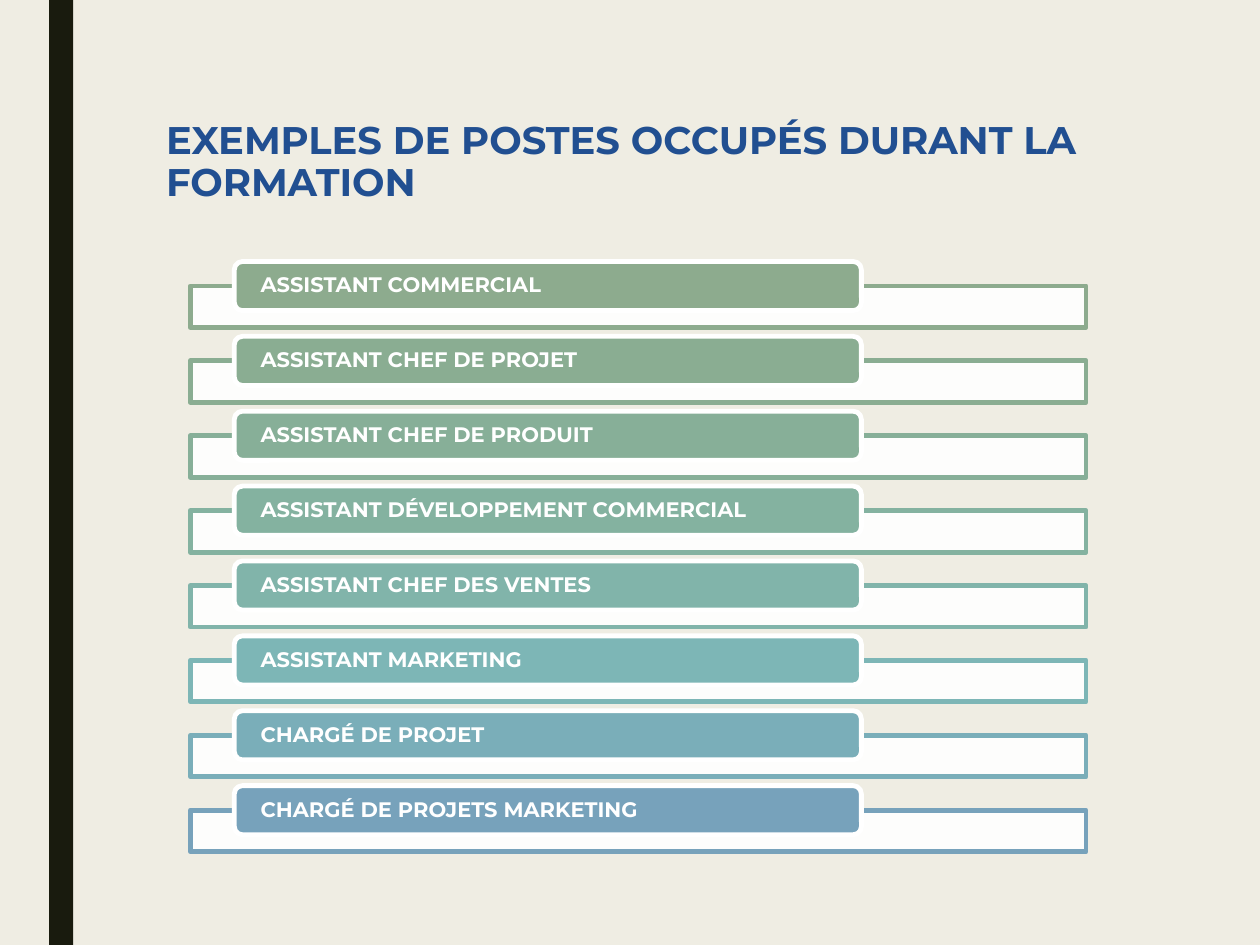
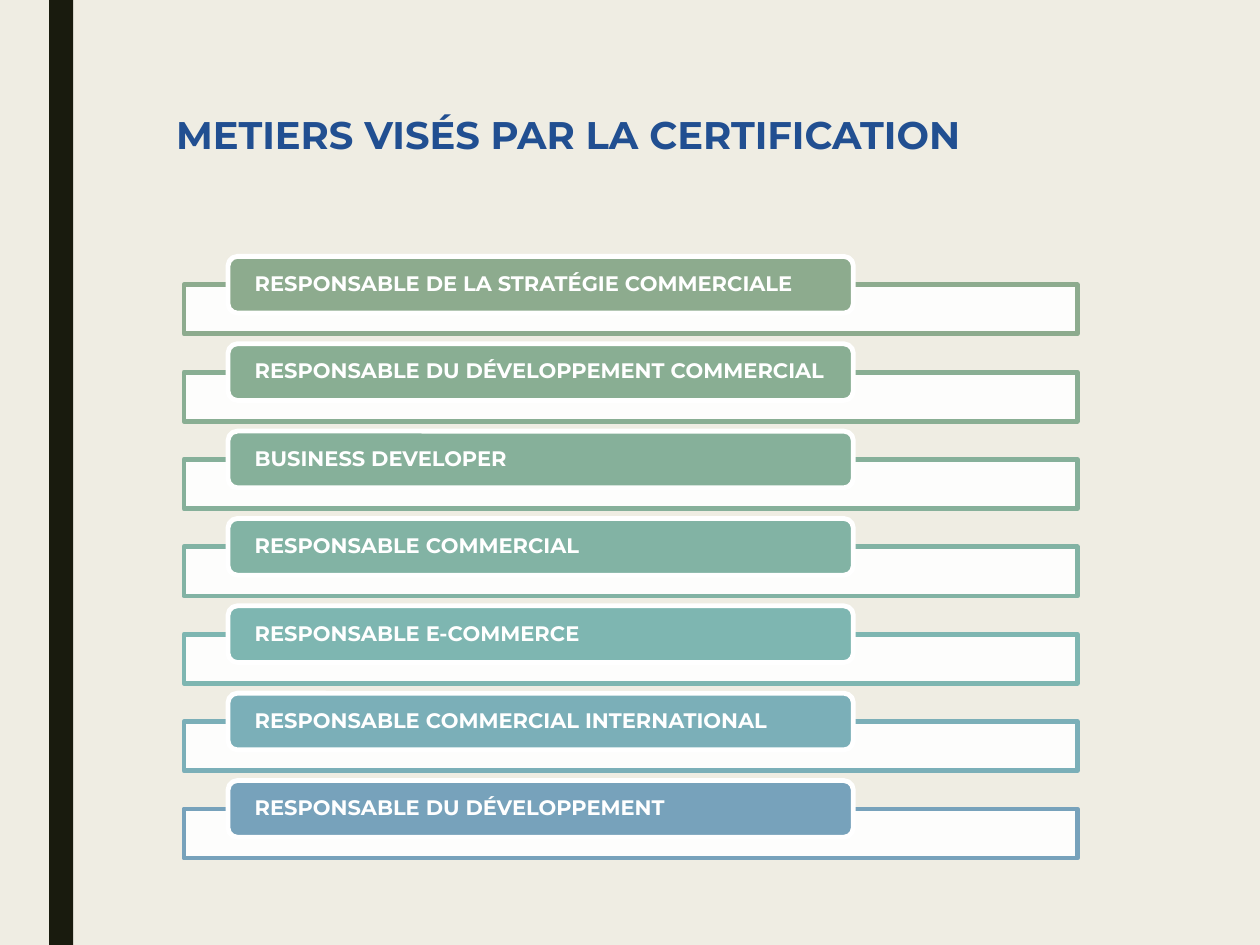
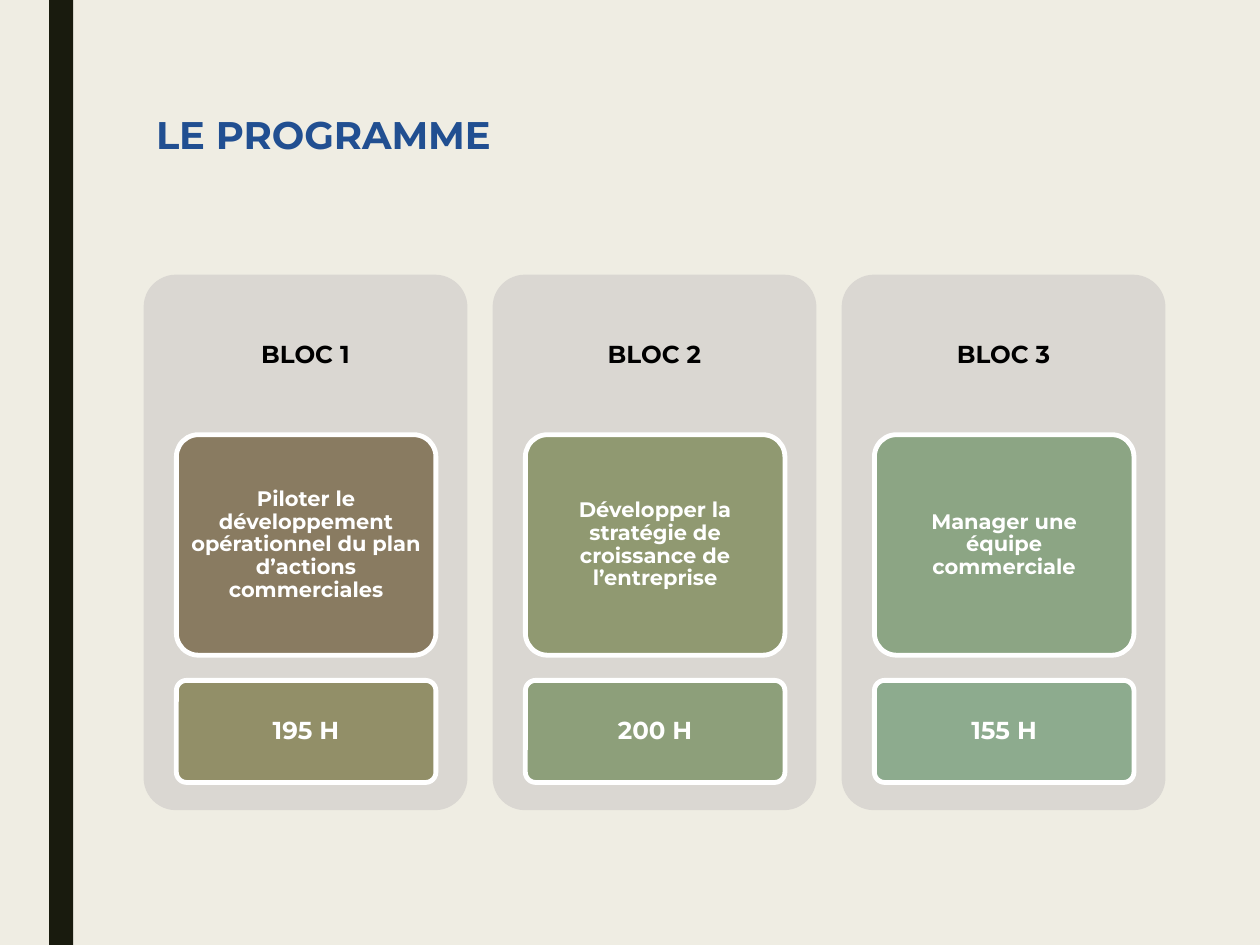
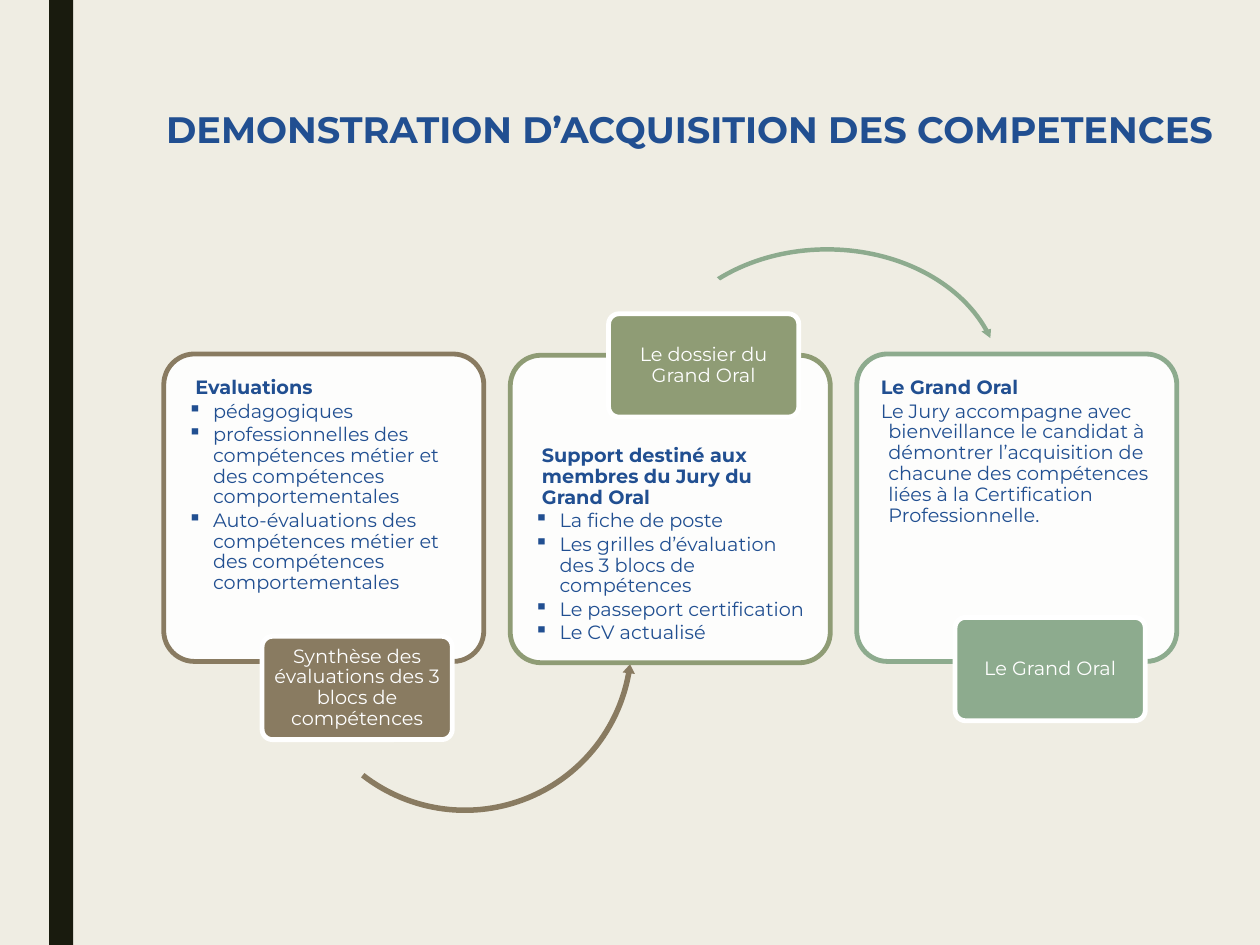
from lxml.etree import SubElement
from pptx import Presentation
from pptx.dml.color import RGBColor
from pptx.enum.shapes import MSO_SHAPE as SHAPE
from pptx.enum.text import MSO_ANCHOR as ANCHOR, PP_ALIGN as ALIGN
from pptx.oxml.ns import qn
from pptx.util import Inches, Pt

FONT = "Montserrat"
LINE_WIDTH = 2.75
COLORS = {
    "paper": "EFEDE3", "band": "191B0E", "blue": "214F91", "white": "FFFFFF",
    "black": "000000", "panel": "DAD7D2", "brown": "897B61", "khaki": "928F68",
    "moss": "909971", "olive": "8F9C75", "fern": "8D9F7A", "leaf": "8CA584",
    "sage": "8DAB8E", "sage2": "8AAD92", "sage3": "87AF98", "mint": "84B2A0",
    "mint2": "81B4AA", "teal": "7DB6B6", "lagoon": "7AAEB9", "steel": "77A2BB",
    "sage4": "89AE93", "sage5": "86B09A", "mint3": "82B3A4", "teal2": "7EB6B1",
    "lagoon2": "7BAFB8",
}
POSTS = [
    ("ASSISTANT COMMERCIAL", "sage"),
    ("ASSISTANT CHEF DE PROJET", "sage2"),
    ("ASSISTANT CHEF DE PRODUIT", "sage3"),
    ("ASSISTANT DÉVELOPPEMENT COMMERCIAL", "mint"),
    ("ASSISTANT CHEF DES VENTES", "mint2"),
    ("ASSISTANT MARKETING", "teal"),
    ("CHARGÉ DE PROJET", "lagoon"),
    ("CHARGÉ DE PROJETS MARKETING", "steel"),
]
JOBS = [
    ("RESPONSABLE DE LA STRATÉGIE COMMERCIALE", "sage"),
    ("RESPONSABLE DU DÉVELOPPEMENT COMMERCIAL", "sage4"),
    ("BUSINESS DEVELOPER", "sage5"),
    ("RESPONSABLE COMMERCIAL", "mint3"),
    ("RESPONSABLE E-COMMERCE", "teal2"),
    ("RESPONSABLE COMMERCIAL INTERNATIONAL", "lagoon2"),
    ("RESPONSABLE DU DÉVELOPPEMENT", "steel"),
]
BLOCKS = [
    ("BLOC 1", "Piloter le développement opérationnel du plan d’actions commerciales",
     "brown", "195 H", "khaki"),
    ("BLOC 2", "Développer la stratégie de croissance de l’entreprise",
     "moss", "200 H", "fern"),
    ("BLOC 3", "Manager une\véquipe\vcommerciale", "leaf", "155 H", "sage"),
]


def rgb(name):
    """Return the named colour."""
    return RGBColor.from_string(COLORS[name])


def set_frame(tf, inset=(0, 0, 0, 0), anchor=ANCHOR.MIDDLE):
    """Wrap a text frame and set its left, top, right and bottom insets."""
    tf.word_wrap = True
    tf.vertical_anchor = anchor
    tf.margin_left, tf.margin_top, tf.margin_right, tf.margin_bottom = map(Inches, inset)


def write(tf, text, size=12, color="white", bold=False, align=ALIGN.LEFT,
          spacing=0.9, after=0, margin=0, indent=0, bullet=None):
    """Add one formatted paragraph to a text frame."""
    p = tf.add_paragraph() if tf.text else tf.paragraphs[0]
    p.text = text
    p.alignment, p.line_spacing, p.space_after = align, spacing, Pt(after)
    pPr = p._p.get_or_add_pPr()
    pPr.set("marL", str(Inches(margin)))
    pPr.set("indent", str(Inches(indent)))
    if bullet:
        SubElement(pPr, qn("a:buChar"), char=bullet)
    for r in p.runs:
        r.font.name, r.font.size, r.font.bold = FONT, Pt(size), bold
        r.font.color.rgb = rgb(color)


def add_shape(slide, kind, box, fill, line=None, alpha=None, adjust=()):
    """Add a flat preset shape."""
    s = slide.shapes.add_shape(kind, *map(Inches, box))
    s.shadow.inherit = False
    s.fill.solid()
    s.fill.fore_color.rgb = rgb(fill)
    if alpha:
        clr = s._element.spPr.find(qn("a:solidFill")).find(qn("a:srgbClr"))
        SubElement(clr, qn("a:alpha"), val=str(alpha * 1000))
    if line:
        s.line.color.rgb = rgb(line)
        s.line.width = Pt(LINE_WIDTH)
    else:
        s.line.fill.background()
    for i, value in enumerate(adjust):
        s.adjustments[i] = value
    return s


def add_text(slide, box, text, inset, anchor, **fmt):
    """Add a text box with one paragraph."""
    tf = slide.shapes.add_textbox(*map(Inches, box)).text_frame
    set_frame(tf, inset, anchor)
    write(tf, text, **fmt)


def add_label(slide, box, text, fill, inset, adjust=(0.1,), **fmt):
    """Add a filled rounded label with a white outline."""
    s = add_shape(slide, SHAPE.ROUNDED_RECTANGLE, box, fill, "white", adjust=adjust)
    set_frame(s.text_frame, inset)
    write(s.text_frame, text, **fmt)


def add_arc_arrow(slide, kind, box, fill, head, end, start):
    """Add a thin circular arrow whose angles are in degrees."""
    angles = [angle * 0.6 for angle in (head, end, start)]
    add_shape(slide, kind, box, fill, adjust=(0.016, *angles, 0.018))


def new_slide(prs, title, left, top, size=22):
    """Add a blank slide with the side band and the title."""
    slide = prs.slides.add_slide(prs.slide_layouts[6])
    add_shape(slide, SHAPE.RECTANGLE, (0.39, 0, 0.19, 7.5), "band")
    add_text(slide, (left, top, 10 - left, 1), title, (0.1, 0.05, 0.1, 0.05),
             ANCHOR.TOP, size=size, color="blue", bold=True, spacing=0.89)
    return slide


def add_rows(slide, rows, left, first, last, width, height):
    """Stack evenly spaced bars, each with a label across its top edge."""
    pitch = (last - first) / (len(rows) - 1)
    label_h = height + 0.06
    for i, (text, color) in enumerate(rows):
        top = first + i * pitch
        add_shape(slide, SHAPE.RECTANGLE, (left, top, width, height),
                  "white", color, alpha=90)
        add_label(slide, (left + 0.35, top - label_h / 2, 0.7 * width, label_h),
                  text, color, (0.19, 0, 0.19, 0), adjust=(), bold=True)


def add_block(slide, left, heading, topic, topic_fill, hours, hours_fill):
    """Add a programme column with heading, topic and hours."""
    add_shape(slide, SHAPE.ROUNDED_RECTANGLE, (left, 2.18, 2.57, 4.25), "panel",
              adjust=(0.1,))
    centred = {"bold": True, "align": ALIGN.CENTER}
    add_text(slide, (left, 2.18, 2.57, 1.28), heading, (0.06,) * 4, ANCHOR.MIDDLE,
             size=14, color="black", **centred)
    for text, fill, top, height, size in ((topic, topic_fill, 3.45, 1.75, 12),
                                          (hours, hours_fill, 5.4, 0.81, 14)):
        add_label(slide, (left + 0.26, top, 2.06, height), text, fill, (0.03,) * 4,
                  size=size, **centred)


def add_card(slide, left, top, color, heading, items, inset_top=0.12,
             indent=0, bullet="▪"):
    """Add an outlined card with a heading and its items."""
    s = add_shape(slide, SHAPE.ROUNDED_RECTANGLE, (left, top, 2.54, 2.44),
                  "white", color, alpha=90, adjust=(0.1,))
    set_frame(s.text_frame, (0.12, inset_top, 0.08, 0.05), ANCHOR.TOP)
    body = {"size": 11, "color": "blue", "after": 1.5}
    write(s.text_frame, heading, bold=True, margin=0.06, indent=indent, **body)
    margin, hanging = (0.2, -0.2) if bullet else (0.06, indent)
    for item in items:
        write(s.text_frame, item, margin=margin, indent=hanging, bullet=bullet, **body)


def add_tag(slide, card_left, top, text, fill):
    """Add the label that overlaps the edge of a card."""
    add_label(slide, (card_left + 0.78, top, 1.51, 0.82), text, fill, (0.02,) * 4,
              size=11, align=ALIGN.CENTER)


def add_skills(slide):
    """Add the three linked cards on the proof of skills."""
    lefts = [1.3 + 2.75 * i for i in range(3)]
    add_card(slide, lefts[0], 2.81, "brown", "Evaluations", [
        "pédagogiques",
        "professionnelles des compétences métier et des compétences comportementales",
        "Auto-évaluations des compétences métier et des compétences comportementales",
    ])
    add_arc_arrow(slide, SHAPE.LEFT_CIRCULAR_ARROW, (2.32, 3.74, 2.74, 2.74),
                  "brown", 3.11, 10.16, 127.87)
    add_tag(slide, lefts[0], 5.05,
            "Synthèse des évaluations des 3 blocs de compétences", "brown")
    add_card(slide, lefts[1], 2.82, "olive",
             "Support destiné aux membres du Jury du Grand Oral", [
                 "La fiche de poste",
                 "Les grilles d’évaluation des 3 blocs de compétences",
                 "Le passeport certification",
                 "Le CV actualisé",
             ], inset_top=0.65)
    add_arc_arrow(slide, SHAPE.CIRCULAR_ARROW, (5.15, 1.94, 2.83, 2.2),
                  "sage", 3.01, 341.61, 223.81)
    add_tag(slide, lefts[1], 2.49, "Le dossier du Grand Oral", "olive")
    add_card(slide, lefts[2], 2.81, "sage", "Le Grand Oral", [
        "Le Jury accompagne avec bienveillance le candidat à démontrer l’acquisition "
        "de chacune des compétences liées à la Certification Professionnelle.",
    ], indent=-0.06, bullet=None)
    add_tag(slide, lefts[2], 4.9, "Le Grand Oral", "sage")


def main():
    """Build and save the four slides."""
    prs = Presentation()
    prs.slide_width, prs.slide_height = Inches(10), Inches(7.5)
    fill = prs.slide_master.background.fill
    fill.solid()
    fill.fore_color.rgb = rgb("paper")

    slide = new_slide(prs, "EXEMPLES DE POSTES OCCUPÉS DURANT LA FORMATION", 1.22, 0.92)
    add_rows(slide, POSTS, 1.51, 2.27, 6.43, 7.11, 0.33)

    slide = new_slide(prs, "METIERS VISÉS PAR LA CERTIFICATION", 1.3, 0.88)
    add_rows(slide, JOBS, 1.46, 2.26, 6.42, 7.09, 0.39)

    slide = new_slide(prs, "LE PROGRAMME", 1.14, 0.88)
    for i, block in enumerate(BLOCKS):
        add_block(slide, 1.14 + 2.77 * i, *block)

    slide = new_slide(prs, "DEMONSTRATION D’ACQUISITION DES COMPETENCES", 1.22, 0.84, 21)
    add_skills(slide)

    prs.save("out.pptx")


if __name__ == "__main__":
    main()
